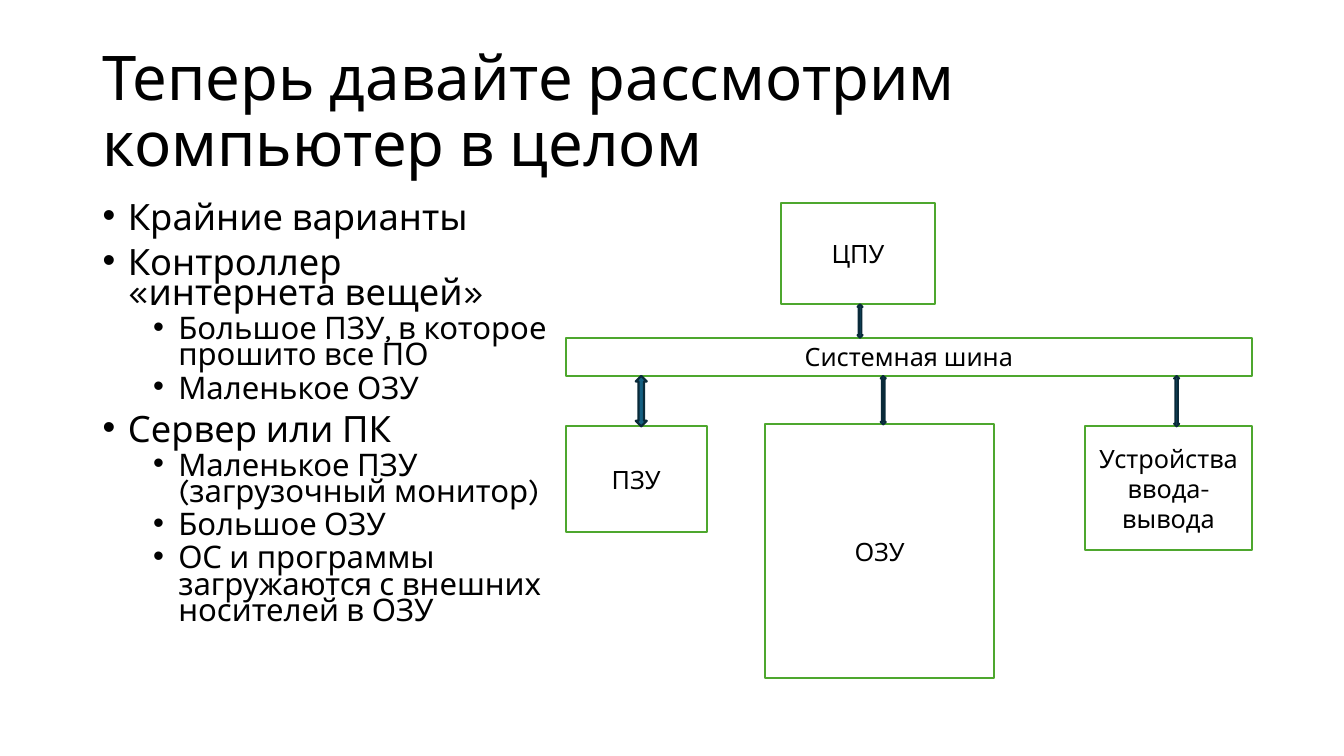
from lxml import etree
from pptx import Presentation
from pptx import util as u
from pptx.dml.color import RGBColor
from pptx.enum import shapes, text
from pptx.oxml import ns

FONT = "Karla"
COLORS = {"ink": "000000", "box": "FFFFFF", "box_line": "4EA72E",
          "arrow": "156082", "arrow_line": "092A39"}

TITLE_LINES = ["Теперь давайте рассмотрим ", "компьютер в целом"]
VARIANTS = [
    (0, "Крайние варианты"),
    (0, "Контроллер «интернета вещей»"),
    (1, "Большое ПЗУ, в которое прошито все ПО"),
    (1, "Маленькое ОЗУ"),
    (0, "Сервер или ПК"),
    (1, "Маленькое ПЗУ (загрузочный монитор)"),
    (1, "Большое ОЗУ"),
    (1, "ОС и программы загружаются с внешних носителей в ОЗУ"),
]
# Per outline level: text size, space before, left margin in inches
LEVELS = [(25.9, 10, 0.25), (22.2, 5, 0.75)]

# Devices under the bus: label, left, gap below bus, width, height,
# arrow centre and arrow width; lefts and centres count from the bus's left
DEVICES = [
    ("ПЗУ", 0, 0.5, 1.4, 1.05, 0.75, 0.11),
    ("ОЗУ", 1.98, 0.48, 2.27, 2.52, 3.15, 0.05),
    ("Устройства ввода-вывода", 5.15, 0.5, 1.66, 1.23, 6.06, 0.05),
]


def rgb(name):
    return RGBColor.from_string(COLORS[name])


def add_text(paragraph, words, size):
    run = paragraph.add_run()
    run.text = words
    run.font.name = FONT
    run.font.size = u.Pt(size)
    run.font.color.rgb = rgb("ink")


def add_part(slide, kind, left, top, width, height, fill):
    part = slide.shapes.add_shape(kind, *map(u.Inches, (left, top, width, height)))
    part.shadow.inherit = False
    part.fill.solid()
    part.fill.fore_color.rgb = rgb(fill)
    part.line.color.rgb = rgb(fill + "_line")
    part.line.width = u.Pt(1.5)
    return part


def add_box(slide, label, left, top, width, height):
    box = add_part(slide, shapes.MSO_SHAPE.RECTANGLE, left, top, width, height, "box")
    frame = box.text_frame
    frame.word_wrap = True
    frame.vertical_anchor = text.MSO_ANCHOR.MIDDLE
    frame.paragraphs[0].alignment = text.PP_ALIGN.CENTER
    add_text(frame.paragraphs[0], label, 18)


def add_arrow(slide, centre, top, bottom, width):
    add_part(slide, shapes.MSO_SHAPE.UP_DOWN_ARROW, centre - width / 2, top,
             width, bottom - top, "arrow")


def add_title(slide, left, top, width, height):
    title = slide.shapes.title
    title.left, title.top, title.width, title.height = map(
        u.Inches, (left, top, width, height))
    frame = title.text_frame
    frame.word_wrap = True
    frame.auto_size = text.MSO_AUTO_SIZE.NONE
    frame.vertical_anchor = text.MSO_ANCHOR.MIDDLE
    heading = frame.paragraphs[0]
    heading.alignment = text.PP_ALIGN.LEFT
    heading.line_spacing = 0.9
    for i, line in enumerate(TITLE_LINES):
        if i:
            heading.add_line_break()
        add_text(heading, line, 44)


def add_variants(slide, left, top, width, height):
    outline = slide.shapes.add_textbox(*map(u.Inches, (left, top, width, height)))
    frame = outline.text_frame
    frame.word_wrap = True
    for i, (level, words) in enumerate(VARIANTS):
        size, before, margin = LEVELS[level]
        item = frame.add_paragraph() if i else frame.paragraphs[0]
        item.level = level
        props = item._p.get_or_add_pPr()
        props.set("marL", str(u.Inches(margin)))
        props.set("indent", str(u.Inches(-0.25)))
        etree.SubElement(props, ns.qn("a:buFont"), typeface="Arial")
        etree.SubElement(props, ns.qn("a:buChar"), char="•")
        item.line_spacing = 0.7
        if i:
            item.space_before = u.Pt(before)
        add_text(item, words, size)


def add_bus_diagram(slide, left, top, width):
    # Processor and the bus below it
    cpu_height, bus_height = 1.01, 0.38
    bus_top = top + 1.34
    bus_bottom = bus_top + bus_height
    add_box(slide, "ЦПУ", left + 2.14, top, 1.52, cpu_height)
    add_box(slide, "Системная шина", left, bus_top, width, bus_height)
    add_arrow(slide, left + 2.92, top + cpu_height, bus_top, 0.05)

    # Memory and input/output hanging from the bus
    for label, offset, gap, box_width, box_height, centre, arrow_width in DEVICES:
        box_top = bus_bottom + gap
        add_box(slide, label, left + offset, box_top, box_width, box_height)
        add_arrow(slide, left + centre, bus_bottom, box_top, arrow_width)


def main():
    deck = Presentation()
    deck.slide_width = u.Inches(13.33)
    deck.slide_height = u.Inches(7.5)
    slide = deck.slides.add_slide(deck.slide_layouts.get_by_name("Title Only"))
    add_title(slide, 0.92, 0.4, 11.5, 1.45)
    add_bus_diagram(slide, 5.61, 2.01, 6.81)
    add_variants(slide, 0.92, 2, 4.66, 4.76)
    deck.save("out.pptx")


if __name__ == "__main__":
    main()
